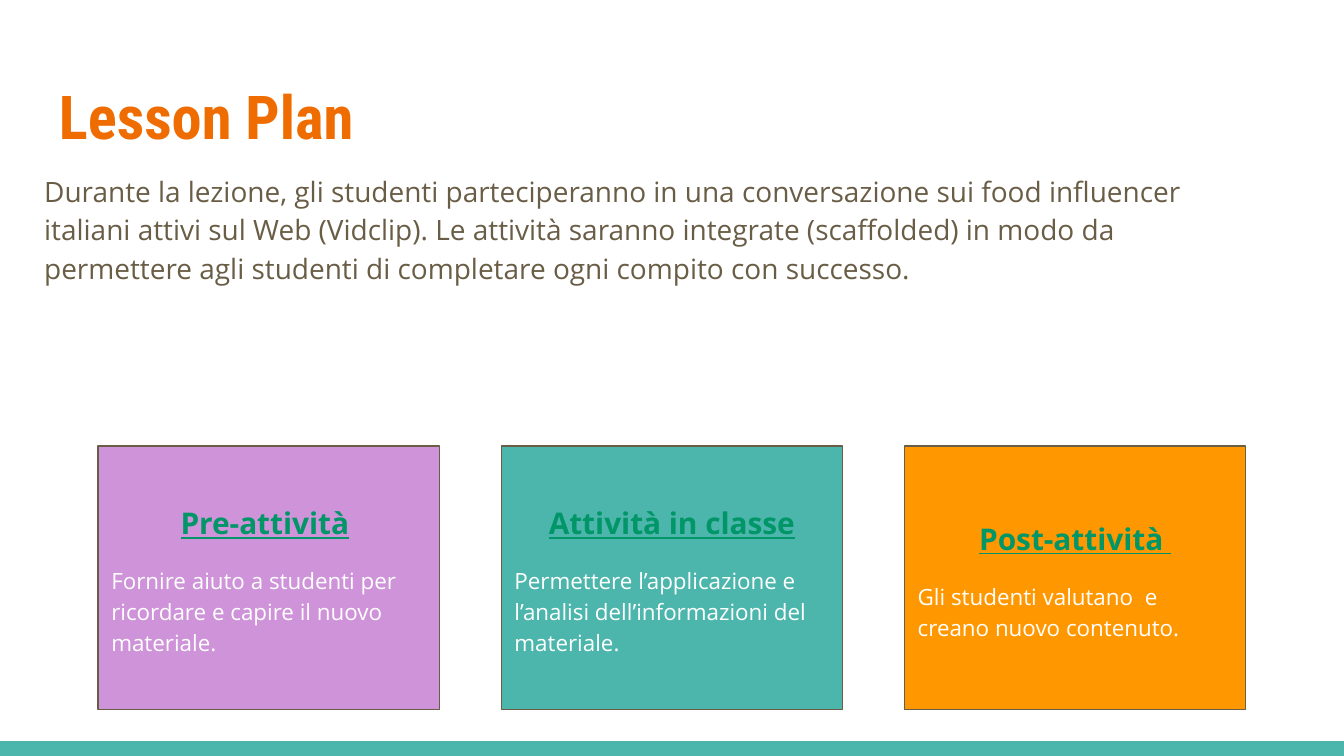
from pptx import Presentation
from pptx.dml.color import RGBColor
from pptx.enum.shapes import MSO_SHAPE
from pptx.enum.text import MSO_ANCHOR, PP_ALIGN
from pptx.util import Inches, Pt

WIDE = 10
HIGH = WIDE * 9 / 16
LEFT, STEP, TOP = 0.73, 3, 3.32
INK = {
    "teal": "4DB6AC", "title": "EF6C00", "body": "695D46",
    "head": "009668", "white": "FFFFFF", "lilac": "CE93D8", "amber": "FF9800",
}
CARDS = [
    ("lilac", "Pre-attività", " ",
     "Fornire aiuto a studenti per ricordare e capire il nuovo materiale."),
    ("teal", "Attività in classe", "",
     "Permettere l’applicazione e l’analisi dell’informazioni del materiale."),
    ("amber", "Post-attività ", "",
     "Gli studenti valutano  e creano nuovo contenuto."),
]
INTRO = (
    "Durante la lezione, gli studenti parteciperanno in una conversazione sui "
    "food influencer italiani attivi sul Web (Vidclip). Le attività saranno "
    "integrate (scaffolded) in modo da permettere agli studenti di completare "
    "ogni compito con successo."
)


def tint(name):
    """Return the named colour."""
    return RGBColor.from_string(INK[name])


def add_run(para, text, size, color, bold=False, line=False, font="Open Sans"):
    """Append one styled run to a paragraph."""
    run = para.add_run()
    run.text = text
    run.font.name, run.font.size = font, Pt(size)
    run.font.bold, run.font.underline = bold, line
    run.font.color.rgb = tint(color)


def set_frame(shape, anchor):
    """Prepare a text frame and return its first paragraph."""
    frame = shape.text_frame
    frame.word_wrap = True
    frame.vertical_anchor = anchor
    frame.margin_left = frame.margin_right = Inches(0.1)
    frame.margin_top = frame.margin_bottom = Inches(0.1)
    return frame.paragraphs[0]


def add_text(slide, area):
    """Add a text box and return its first paragraph."""
    box = slide.shapes.add_textbox(*map(Inches, area))
    return set_frame(box, MSO_ANCHOR.TOP)


def add_rect(slide, area, fill, edge=None):
    """Add a flat rectangle with an optional thin edge."""
    rect = slide.shapes.add_shape(MSO_SHAPE.RECTANGLE, *map(Inches, area))
    rect.shadow.inherit = False
    rect.fill.solid()
    rect.fill.fore_color.rgb = tint(fill)
    if edge:
        rect.line.color.rgb = tint(edge)
        rect.line.width = Pt(0.75)
    else:
        rect.line.fill.background()
    return rect


def add_card(slide, col, fill, head, tail, text):
    """Add the card of one lesson phase in its column."""
    card = add_rect(slide, (LEFT + col * STEP, TOP, 2.54, 1.96), fill, "body")
    top = set_frame(card, MSO_ANCHOR.MIDDLE)
    top.alignment, top.line_spacing = PP_ALIGN.CENTER, 1.15
    add_run(top, head, 16, "head", True, True)
    if tail:
        add_run(top, tail, 16, "white")
    para = card.text_frame.add_paragraph()
    para.alignment, para.line_spacing = PP_ALIGN.LEFT, 1.15
    para.space_before = para.space_after = Pt(12)
    add_run(para, text, 12, "white")


def main():
    """Build and save the lesson plan slide."""
    deck = Presentation()
    deck.slide_width, deck.slide_height = Inches(WIDE), Inches(HIGH)
    slide = deck.slides.add_slide(deck.slide_layouts[6])
    add_rect(slide, (0, HIGH - 0.11, WIDE, 0.11), "teal")
    title = add_text(slide, (0.34, 0.49, 9.32, 0.77))
    add_run(title, "Lesson Plan", 32.4, "title", True, font="Roboto Condensed")
    intro = add_text(slide, (0.23, 1.16, 9.32, 1.1))
    intro.line_spacing = 1.15
    add_run(intro, INTRO, 15, "body")
    for col, card in enumerate(CARDS):
        add_card(slide, col, *card)
    deck.save("out.pptx")


if __name__ == "__main__":
    main()
